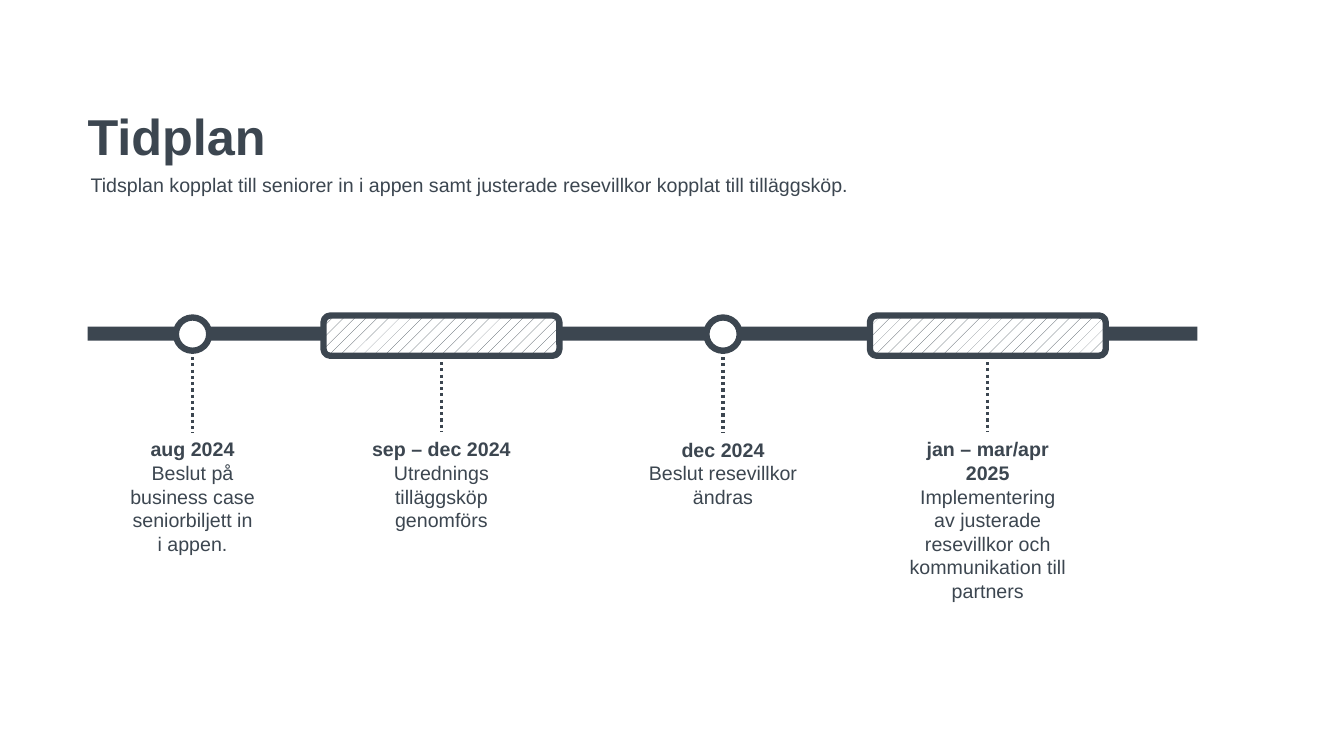
"""Build a timeline slide with milestones and periods above centred labels."""
from typing import Any, NamedTuple

from lxml.etree import SubElement
from pptx import Presentation
from pptx.dml.color import RGBColor
from pptx.enum.dml import MSO_LINE, MSO_PATTERN
from pptx.enum.shapes import MSO_CONNECTOR, MSO_SHAPE
from pptx.enum.text import MSO_ANCHOR, MSO_AUTO_SIZE, PP_ALIGN
from pptx.oxml.ns import qn
from pptx.util import Inches, Pt

COLOURS = {"ink": "3C4650", "paper": "FFFFFF"}
INK = RGBColor.from_string(COLOURS["ink"])
PAPER = RGBColor.from_string(COLOURS["paper"])
WIDTH, HEIGHT = Inches(13.333), Inches(7.5)
LABEL_TOP = 57.2
BODY = {"name": "Arial", "size": Pt(14), "bold": False}
HEADING = {**BODY, "bold": True}
TITLE = {**HEADING, "size": Pt(36)}


class Area(NamedTuple):
    """Place and size in percent of the slide."""
    left: float
    top: float
    width: float
    height: float


class Marker(NamedTuple):
    """Outline and size of a mark on the timeline."""
    shape: MSO_SHAPE
    top: float
    width: float
    height: float
    hatched: bool


class Event(NamedTuple):
    """A mark on the timeline and its label."""
    centre: float
    marker: Marker
    date: str
    text: str
    label_width: float
    label_height: float


MILESTONE = Marker(MSO_SHAPE.OVAL, 42, 2.48, 4.4, False)
PERIOD = Marker(MSO_SHAPE.ROUNDED_RECTANGLE, 41.73, 17.55, 5.33, True)
EVENTS = [
    Event(14.33, MILESTONE, "aug 2024",
          "Beslut på business case seniorbiljett in\vi appen.", 11.33, 17.07),
    Event(32.85, PERIOD, "sep – dec 2024",
          "Utrednings tilläggsköp genomförs", 13.2, 13.87),
    Event(53.8, MILESTONE, "dec 2024", "Beslut resevillkor ändras", 13.2, 10.8),
    Event(73.5, PERIOD, "jan – mar/apr 2025",
          "Implementering av justerade resevillkor och kommunikation till partners",
          13.2, 23.33),
]


def across(share: float) -> int:
    return round(WIDTH * share / 100)


def down(share: float) -> int:
    return round(HEIGHT * share / 100)


def place(area: Area) -> tuple[int, int, int, int]:
    return across(area.left), down(area.top), across(area.width), down(area.height)


def set_values(target: Any, values: dict[str, Any]) -> None:
    for name, value in values.items():
        setattr(target, name, value)


def write(para: Any, text: str, style: dict[str, Any]) -> None:
    para.text = text
    for span in para.runs:
        set_values(span.font, style)
        span.font.color.rgb = INK


def add_text(page: Any, area: Area, lines: list[tuple[str, dict[str, Any]]],
             alignment: PP_ALIGN) -> Any:
    box = page.shapes.add_textbox(*place(area))
    frame = box.text_frame
    set_values(frame, {"word_wrap": True, "auto_size": MSO_AUTO_SIZE.SHAPE_TO_FIT_TEXT})
    for index, (text, style) in enumerate(lines):
        para = frame.add_paragraph() if index else frame.paragraphs[0]
        write(para, text, style)
        para.alignment = alignment
    return box


def add_title(page: Any, text: str) -> None:
    title = page.shapes.title
    area = place(Area(6.52, 9.6, 87, 12.4))
    set_values(title, dict(zip(("left", "top", "width", "height"), area)))
    frame = title.text_frame
    margins = {f"margin_{side}": 0 for side in ("left", "top", "right", "bottom")}
    set_values(frame, {**margins, "vertical_anchor": MSO_ANCHOR.BOTTOM,
                       "word_wrap": True})
    para = frame.paragraphs[0]
    write(para, text, TITLE)
    set_values(para, {"alignment": PP_ALIGN.LEFT, "line_spacing": 0.9})


def add_bar(page: Any) -> None:
    bar = page.shapes.add_shape(MSO_SHAPE.RECTANGLE, *place(Area(6.52, 43.2, 82.58, 1.87)))
    bar.shadow.inherit = False
    bar.fill.solid()
    bar.fill.fore_color.rgb = INK
    bar.line.fill.background()


def add_marker(page: Any, marker: Marker, centre: float) -> Any:
    area = Area(centre - marker.width / 2, marker.top, marker.width, marker.height)
    mark = page.shapes.add_shape(marker.shape, *place(area))
    mark.shadow.inherit = False
    if marker.hatched:
        mark.fill.patterned()
        mark.fill.pattern = MSO_PATTERN.PERCENT_10
        mark.fill.fore_color.rgb = INK
        mark.fill.back_color.rgb = PAPER
    else:
        mark.fill.solid()
        mark.fill.fore_color.rgb = PAPER
    mark.line.color.rgb = INK
    mark.line.width = Pt(4.5)
    return mark


def add_event(page: Any, event: Event) -> None:
    marker = event.marker
    mark = add_marker(page, marker, event.centre)
    area = Area(event.centre - event.label_width / 2, LABEL_TOP,
                event.label_width, event.label_height)
    label = add_text(page, area, [(event.date, HEADING), (event.text, BODY)],
                     PP_ALIGN.CENTER)
    middle = across(event.centre)
    leader = page.shapes.add_connector(
        MSO_CONNECTOR.STRAIGHT, middle, down(marker.top + marker.height),
        middle, down(LABEL_TOP))
    if marker is PERIOD:
        leader.begin_connect(mark, 2)
    leader.end_connect(label, 0)
    leader.line.color.rgb = INK
    set_values(leader.line, {"width": Pt(2.25), "dash_style": MSO_LINE.ROUND_DOT})
    SubElement(leader.element.spPr, qn("a:effectLst"))


def main() -> None:
    deck = Presentation()
    set_values(deck, {"slide_width": WIDTH, "slide_height": HEIGHT})
    page = deck.slides.add_slide(deck.slide_layouts[5])
    add_title(page, "Tidplan")
    add_text(page, Area(6, 22.27, 68.48, 4.53),
             [("Tidsplan kopplat till seniorer in i appen samt justerade "
               "resevillkor kopplat till tilläggsköp.", BODY)], PP_ALIGN.LEFT)
    add_bar(page)
    for event in EVENTS:
        add_event(page, event)
    deck.save("out.pptx")


if __name__ == "__main__":
    main()
